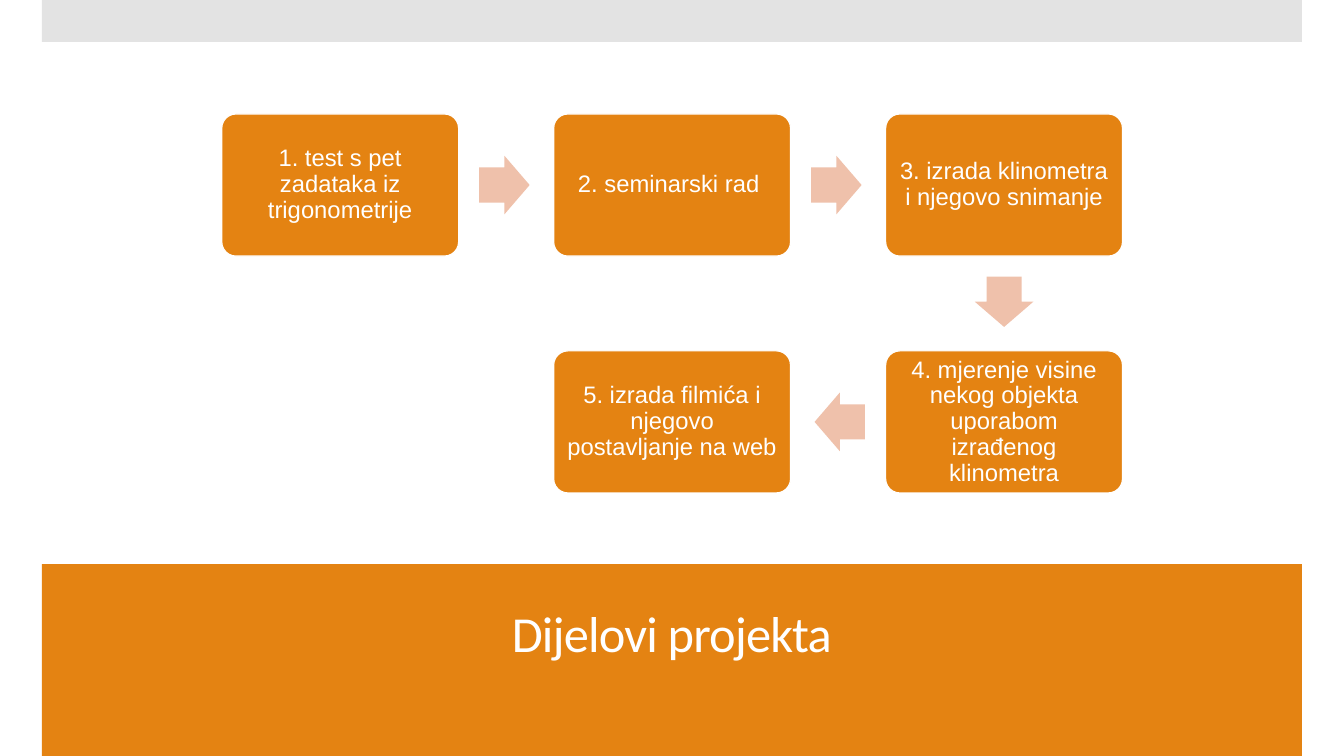
"""Build the slide that shows the parts of the project as a bending process."""
from pptx import Presentation
from pptx.dml.color import RGBColor
from pptx.enum.shapes import MSO_SHAPE as Shape
from pptx.enum.text import MSO_ANCHOR as Anchor, MSO_AUTO_SIZE as AutoSize, PP_ALIGN as Align
from pptx.oxml.xmlchemy import OxmlElement
from pptx.util import Pt

TITLE = "Dijelovi projekta"
STEPS = [
    ("1. test s pet zadataka iz trigonometrije", 0, 0),
    ("2. seminarski rad ", 1, 0),
    ("3. izrada klinometra i njegovo snimanje", 2, 0),
    ("4. mjerenje visine nekog objekta uporabom izrađenog klinometra", 2, 1),
    ("5. izrada filmića i njegovo postavljanje na web", 1, 1),
]
COLORS = {"orange": "E48312", "arrow": "EFC1AB", "gray": "C8C8C8", "white": "FFFFFF"}

SLIDE_W, SLIDE_H = 960, 540
BAND_LEFT, BAND_W = 30, 900
TOP_BAND_H, TITLE_BAND_H = 30, 137
BOX_W, BOX_H = 169.2, 101.5
GRID_LEFT, GRID_TOP = 158.4, 81.4
PITCH_X, PITCH_Y = 237.1, 169.2
ARROW_W, ARROW_H, ARROW_SHIFT = 36, 41.8, 1.2
INSET = 4.9


def color(name):
    return RGBColor.from_string(COLORS[name])


def add_block(slide, kind, left, top, width, height, fill):
    block = slide.shapes.add_shape(kind, Pt(left), Pt(top), Pt(width), Pt(height))
    block.shadow.inherit = False
    block.fill.solid()
    block.fill.fore_color.rgb = color(fill)
    block.line.fill.background()
    return block


def write(frame, text, size, font):
    frame.word_wrap = True
    frame.auto_size = AutoSize.NONE
    frame.vertical_anchor = Anchor.MIDDLE
    para = frame.paragraphs[0]
    para.alignment = Align.CENTER
    para.line_spacing = 0.9
    span = para.add_run()
    span.text = text
    span.font.size = Pt(size)
    span.font.name = font
    span.font.color.rgb = color("white")
    return span


def add_bands(slide):
    add_block(slide, Shape.RECTANGLE, BAND_LEFT, SLIDE_H - TITLE_BAND_H,
              BAND_W, TITLE_BAND_H, "orange")
    top_band = add_block(slide, Shape.RECTANGLE, BAND_LEFT, 0, BAND_W, TOP_BAND_H, "gray")
    alpha = OxmlElement("a:alpha")
    alpha.set("val", "50000")
    top_band.fill._xPr.find(".//{*}srgbClr").append(alpha)


def add_title(slide):
    title = slide.shapes.title
    title.left, title.top, title.width, title.height = Pt(50.4), Pt(414), Pt(859), Pt(80.6)
    span = write(title.text_frame, TITLE, 36, "Calibri")
    span.font._element.set("spc", "-60")
    slide.shapes._spTree.append(title._element)


def add_step(slide, text, column, row):
    box = add_block(slide, Shape.ROUNDED_RECTANGLE, GRID_LEFT + column * PITCH_X,
                    GRID_TOP + row * PITCH_Y, BOX_W, BOX_H, "orange")
    box.adjustments[0] = 0.1
    box.line.color.rgb = color("white")
    box.line.width = Pt(0.85)
    frame = box.text_frame
    frame.margin_left = frame.margin_right = frame.margin_top = frame.margin_bottom = Pt(INSET)
    write(frame, text, 17, "Arial")


def add_arrow(slide, start, end):
    across, down = end[0] - start[0], end[1] - start[1]
    center_x = GRID_LEFT + BOX_W / 2 + (start[0] + across / 2) * PITCH_X - across * ARROW_SHIFT
    center_y = GRID_TOP + BOX_H / 2 + (start[1] + down / 2) * PITCH_Y - down * ARROW_SHIFT
    arrow = add_block(slide, Shape.RIGHT_ARROW, center_x - ARROW_W / 2,
                      center_y - ARROW_H / 2, ARROW_W, ARROW_H, "arrow")
    arrow.adjustments[0] = 0.6
    arrow.adjustments[1] = 0.5
    arrow.rotation = {(1, 0): 0, (0, 1): 90, (-1, 0): 180}[across, down]


def main():
    deck = Presentation()
    deck.slide_width, deck.slide_height = Pt(SLIDE_W), Pt(SLIDE_H)
    page = deck.slides.add_slide(deck.slide_layouts[5])
    add_bands(page)
    add_title(page)
    for step in STEPS:
        add_step(page, *step)
    for step, following in zip(STEPS, STEPS[1:]):
        add_arrow(page, step[1:], following[1:])
    deck.save("out.pptx")


if __name__ == "__main__":
    main()
